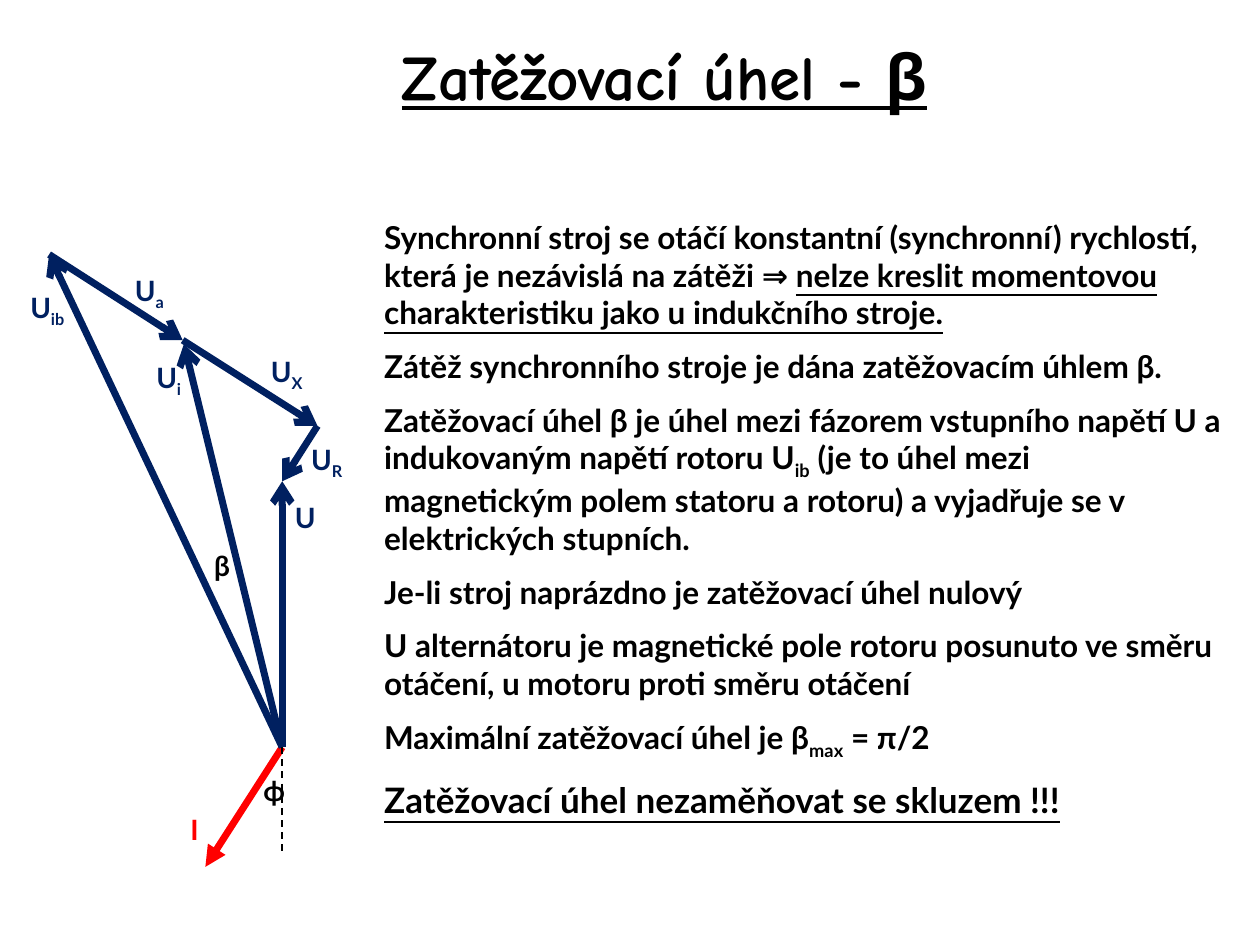
from dataclasses import dataclass

from lxml.etree import SubElement
from pptx import Presentation
from pptx.dml.color import RGBColor
from pptx.enum.dml import MSO_LINE_DASH_STYLE as Dash
from pptx.enum.shapes import MSO_CONNECTOR as Connector
from pptx.enum.text import MSO_ANCHOR as Anchor
from pptx.enum.text import MSO_AUTO_SIZE as AutoSize
from pptx.enum.text import PP_ALIGN as Align
from pptx.oxml.ns import qn
from pptx.util import Inches, Pt

BLACK = RGBColor(0x00, 0x00, 0x00)
NAVY = RGBColor(0x00, 0x20, 0x60)
RED = RGBColor(0xFF, 0x00, 0x00)
BODY_FONT, TITLE_FONT = "Lato", "Comic Neue"

Point = tuple[float, float]


@dataclass
class Span:
    text: str
    underline: bool = False
    subscript: bool = False


@dataclass
class Phasor:
    start: Point
    end: Point
    color: RGBColor = NAVY
    head: str = "arrow"
    width: float = 4


@dataclass
class Label:
    left: float
    top: float
    width: float
    text: str
    index: str = ""
    color: RGBColor = NAVY


@dataclass
class Arc:
    start: Point
    curves: list[tuple[Point, Point, Point]]


# Phasor diagram
ORIGIN = (2.24, 5.93)
U_TIP, UR_START, UI_TIP, UIB_TIP = (2.24, 3.82), (2.52, 3.38), (1.45, 2.7), (0.39, 2.02)
PHASORS = [
    Phasor(ORIGIN, U_TIP),
    Phasor(ORIGIN, (1.63, 6.88), RED, "triangle"),
    Phasor(UR_START, U_TIP),
    Phasor(UI_TIP, UR_START),
    Phasor(ORIGIN, (1.46, 2.73)),
    Phasor(UIB_TIP, UI_TIP),
    Phasor(ORIGIN, UIB_TIP),
]
LABELS = [
    Label(1.47, 6.41, 0.19, "I", color=RED),
    Label(2.3, 3.93, 0.24, "U"),
    Label(2.43, 3.49, 0.36, "U", "R"),
    Label(2.11, 2.79, 0.35, "U", "X"),
    Label(1.2, 2.84, 0.29, "U", "i"),
    Label(1.03, 2.15, 0.34, "U", "a"),
    Label(0.2, 2.28, 0.39, "U", "ib"),
    Label(1.66, 4.31, 0.2, "β", color=BLACK),
    Label(2.05, 6.1, 0.21, "ϕ", color=BLACK),
]
ARCS = [
    Arc((2.24, 4.65), [((2.18, 4.62), (2.12, 4.59), (2.05, 4.59)),
                       ((1.97, 4.58), (1.85, 4.59), (1.79, 4.61)),
                       ((1.73, 4.63), (1.69, 4.69), (1.66, 4.71))]),
    Arc((2.24, 6.44), [((2.22, 6.44), (2.17, 6.47), (2.14, 6.47)),
                       ((2.11, 6.47), (2.07, 6.45), (2.05, 6.44)),
                       ((2.02, 6.42), (1.99, 6.4), (1.98, 6.37))]),
]

# Explanation
PARAGRAPHS = [
    [Span("Synchronní stroj se otáčí konstantní (synchronní) rychlostí, "
          "která je nezávislá na zátěži ⇒ "),
     Span("nelze kreslit momentovou charakteristiku jako u indukčního stroje.", underline=True)],
    [Span("Zátěž synchronního stroje je dána zatěžovacím úhlem β.")],
    [Span("Zatěžovací úhel β je úhel mezi fázorem vstupního napětí U a "
          "indukovaným napětí rotoru U"),
     Span("ib", subscript=True),
     Span(" (je to úhel mezi magnetickým polem statoru a rotoru) "
          "a vyjadřuje se v elektrických stupních.")],
    [Span("Je-li stroj naprázdno je zatěžovací úhel nulový")],
    [Span("U alternátoru je magnetické pole rotoru posunuto ve směru otáčení, "
          "u motoru proti směru otáčení")],
    [Span("Maximální zatěžovací úhel je β"), Span("max", subscript=True), Span(" = π/2")],
    [Span("Zatěžovací úhel nezaměňovat se skluzem !!!", underline=True)],
]


def add_box(page, left: float, top: float, width: float, height: float, **frame_format):
    box = page.shapes.add_textbox(Inches(left), Inches(top), Inches(width), Inches(height))
    for name, value in frame_format.items():
        setattr(box.text_frame, name, value)
    return box.text_frame


def write_spans(para, spans: list[Span], size: float, color: RGBColor = BLACK,
                font: str = BODY_FONT) -> None:
    for span in spans:
        run = para.add_run()
        run.text = span.text
        font_format = {"name": font, "size": Pt(size), "bold": True, "underline": span.underline}
        for name, value in font_format.items():
            setattr(run.font, name, value)
        run.font.color.rgb = color
        if span.subscript:
            run.font._element.set("baseline", "-25000")


def style_line(shape, color: RGBColor, width: float, head: str = "") -> None:
    shape.line.color.rgb = color
    shape.line.width = Pt(width)
    if head:
        SubElement(shape.line._get_or_add_ln(), qn("a:tailEnd"), type=head)


def add_phasor(page, phasor: Phasor):
    ends = [Inches(value) for value in (*phasor.start, *phasor.end)]
    line = page.shapes.add_connector(Connector.STRAIGHT, *ends)
    style_line(line, phasor.color, phasor.width, phasor.head)
    SubElement(line._element.spPr, qn("a:effectLst"))
    return line


def add_label(page, label: Label) -> None:
    margins = {f"margin_{side}": Inches(0.04) for side in ("left", "top", "right", "bottom")}
    frame = add_box(page, label.left, label.top, label.width, 0.35, word_wrap=False,
                    auto_size=AutoSize.SHAPE_TO_FIT_TEXT, vertical_anchor=Anchor.MIDDLE, **margins)
    spans = [Span(label.text)]
    if label.index:
        spans.append(Span(label.index, subscript=True))
    write_spans(frame.paragraphs[0], spans, 16, label.color)


def curve_points(start: Point, curve: tuple[Point, Point, Point], steps: int = 8) -> list[Point]:
    """Points along a cubic Bézier curve, without its start."""
    points = []
    for step in range(1, steps + 1):
        t = step / steps
        weights = ((1 - t) ** 3, 3 * t * (1 - t) ** 2, 3 * t ** 2 * (1 - t), t ** 3)
        points.append(tuple(sum(w * p[axis] for w, p in zip(weights, (start, *curve)))
                            for axis in (0, 1)))
    return points


def add_arc(page, arc: Arc) -> None:
    points = [arc.start]
    for curve in arc.curves:
        points += curve_points(points[-1], curve)
    builder = page.shapes.build_freeform(*arc.start, scale=float(Inches(1)))
    builder.add_line_segments(points[1:], close=False)
    shape = builder.convert_to_shape()
    shape.shadow.inherit = False
    shape.fill.background()
    style_line(shape, BLACK, 1, "stealth")


def main() -> None:
    deck = Presentation()
    deck.slide_width, deck.slide_height = Inches(10), Inches(7.5)
    page = deck.slides.add_slide(deck.slide_layouts[6])

    # Title
    title = add_box(page, 2.16, 0.21, 6.23, 0.77, word_wrap=True, vertical_anchor=Anchor.MIDDLE)
    title.paragraphs[0].alignment = Align.CENTER
    write_spans(title.paragraphs[0], [Span("Zatěžovací úhel - β", underline=True)], 36,
                font=TITLE_FONT)

    # Diagram
    for phasor in PHASORS:
        add_phasor(page, phasor)
    axis = add_phasor(page, Phasor(ORIGIN, (2.24, 6.76), BLACK, "", 1))
    axis.line.dash_style = Dash.DASH
    for arc in ARCS:
        add_arc(page, arc)
    for label in LABELS:
        add_label(page, label)

    # Explanation, with half a line before each paragraph
    frame = add_box(page, 2.95, 1.68, 6.85, 5.56, word_wrap=True,
                    auto_size=AutoSize.SHAPE_TO_FIT_TEXT)
    for number, spans in enumerate(PARAGRAPHS):
        para = frame.add_paragraph() if number else frame.paragraphs[0]
        size = 20 if spans is PARAGRAPHS[-1] else 18
        para.space_before = Pt(size / 2 if number else 0)
        write_spans(para, spans, size)

    deck.save("out.pptx")


if __name__ == "__main__":
    main()
